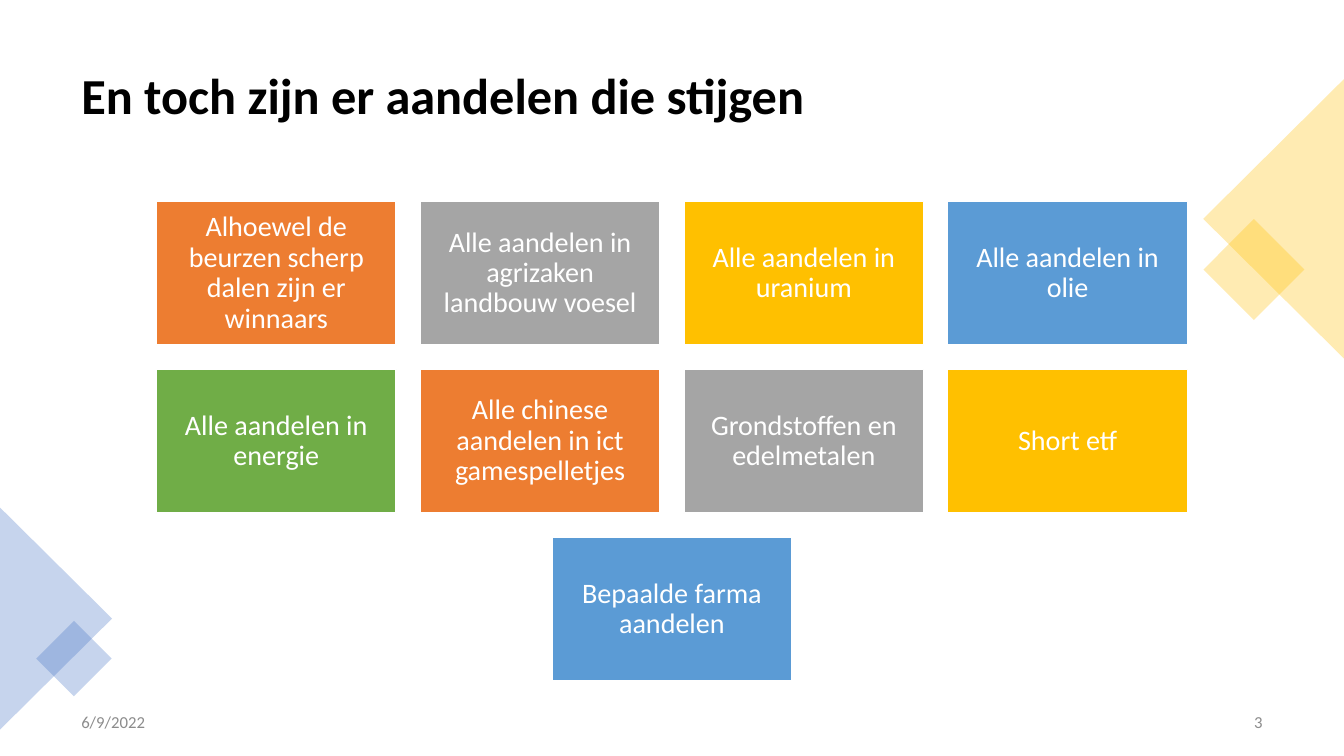
from lxml.etree import SubElement
from pptx import Presentation
from pptx.dml.color import RGBColor
from pptx.enum.shapes import MSO_SHAPE
from pptx.enum.text import MSO_ANCHOR, PP_ALIGN
from pptx.oxml.ns import qn
from pptx.util import Pt

SLIDE_WIDTH, SLIDE_HEIGHT = 907, 510
COLORS = {
    "ink": "000000",
    "muted": "8C8C8C",
    "white": "FFFFFF",
    "orange": "ED7D31",
    "gray": "A5A5A5",
    "gold": "FFC000",
    "sky": "5B9BD5",
    "green": "70AD47",
    "blue": "4472C4",
}
WINNERS = [
    ("Alhoewel de beurzen scherp dalen zijn er winnaars", "orange"),
    ("Alle aandelen in agrizaken landbouw voesel", "gray"),
    ("Alle aandelen in uranium", "gold"),
    ("Alle aandelen in olie", "sky"),
    ("Alle aandelen in energie", "green"),
    ("Alle chinese aandelen in ict gamespelletjes", "orange"),
    ("Grondstoffen en edelmetalen", "gray"),
    ("Short etf", "gold"),
    ("Bepaalde farma aandelen", "sky"),
]


def rgb(color):
    """Look up a named colour."""
    return RGBColor.from_string(COLORS[color])


def write(frame, text, size, color, align=PP_ALIGN.LEFT, bold=False, spacing=1.0):
    """Put one vertically centred run in a text frame."""
    frame.word_wrap = True
    frame.vertical_anchor = MSO_ANCHOR.MIDDLE
    paragraph = frame.paragraphs[0]
    paragraph.alignment = align
    paragraph.line_spacing = spacing
    run = paragraph.add_run()
    run.text = text
    run.font.name = "Calibri"
    run.font.size = Pt(size)
    run.font.bold = bold
    run.font.color.rgb = rgb(color)


def add_label(slide, box, text, size, color, **style):
    """Fill the box with a line of text."""
    label = slide.shapes.add_textbox(*map(Pt, box))
    write(label.text_frame, text, size, color, **style)


def add_block(slide, preset, box, color):
    """Draw a filled preset shape without a shadow."""
    block = slide.shapes.add_shape(preset, *map(Pt, box))
    block.shadow.inherit = False
    block.fill.solid()
    block.fill.fore_color.rgb = rgb(color)
    return block


def add_corner(slide, box, color, turn, diamond_center, diamond_side):
    """Decorate a slide edge with a sideways triangle and a small diamond."""
    left, top, width, height = box
    triangle_box = (left + (width - height) / 2, top + (height - width) / 2, height, width)
    diamond_box = (
        left + diamond_center[0] - diamond_side / 2,
        top + diamond_center[1] - diamond_side / 2,
        diamond_side,
        diamond_side,
    )
    for preset, part_box, rotation in (
        (MSO_SHAPE.ISOSCELES_TRIANGLE, triangle_box, turn),
        (MSO_SHAPE.RECTANGLE, diamond_box, 45),
    ):
        accent = add_block(slide, preset, part_box, color)
        accent.rotation = rotation
        accent.line.fill.background()
        tint = accent.fill._xPr.find(qn("a:solidFill"))[0]
        SubElement(tint, qn("a:alpha"), val="30000")


def add_winners(slide, box, columns=4, gap=16.2):
    """Lay out the winners in rows, centring the last row in the box."""
    left, top, width, height = box
    rows = -(-len(WINNERS) // columns)
    tile_width = (width - (columns - 1) * gap) / columns
    tile_height = (height - (rows - 1) * gap) / rows
    for index, (winner, color) in enumerate(WINNERS):
        row, column = divmod(index, columns)
        in_row = min(columns, len(WINNERS) - row * columns)
        indent = (columns - in_row) * (tile_width + gap) / 2
        tile_box = (
            left + indent + column * (tile_width + gap),
            top + row * (tile_height + gap),
            tile_width,
            tile_height,
        )
        tile = add_block(slide, MSO_SHAPE.RECTANGLE, tile_box, color)
        tile.line.color.rgb = rgb("white")
        tile.line.width = Pt(1)
        frame = tile.text_frame
        frame.margin_left = frame.margin_right = Pt(5.7)
        frame.margin_top = frame.margin_bottom = Pt(5.7)
        write(frame, winner, 19, "white", align=PP_ALIGN.CENTER, spacing=0.9)


def add_footer(slide, box, date, number):
    """Set the date at the left and the slide number at the right."""
    left, top, width, height = box
    field = width / 4
    add_label(slide, (left, top, field, height), date, 11.3, "muted")
    number_box = (left + width - field, top, field, height)
    add_label(slide, number_box, number, 11.3, "muted", align=PP_ALIGN.RIGHT)


def main():
    """Build and save the slide."""
    deck = Presentation()
    deck.slide_width, deck.slide_height = Pt(SLIDE_WIDTH), Pt(SLIDE_HEIGHT)
    slide = deck.slides.add_slide(deck.slide_layouts[6])
    title_box = (47.8, 24.1, 811.4, 84.2)
    add_label(slide, title_box, "En toch zijn er aandelen die stijgen", 34, "ink",
              bold=True, spacing=0.9)
    add_corner(slide, (SLIDE_WIDTH - 95, 53.3, 95, 188.6), "gold", 270, (34.2, 128.6), 48.2)
    add_corner(slide, (0, 342.4, 75.6, 149.8), "blue", 90, (49.9, 101.9), 36)
    add_footer(slide, (47.8, 473, 811.4, 27.4), "6/9/2022", "3")
    add_winners(slide, (105.6, 135.9, SLIDE_WIDTH - 2 * 105.6, 323.6))
    deck.save("out.pptx")


if __name__ == "__main__":
    main()
